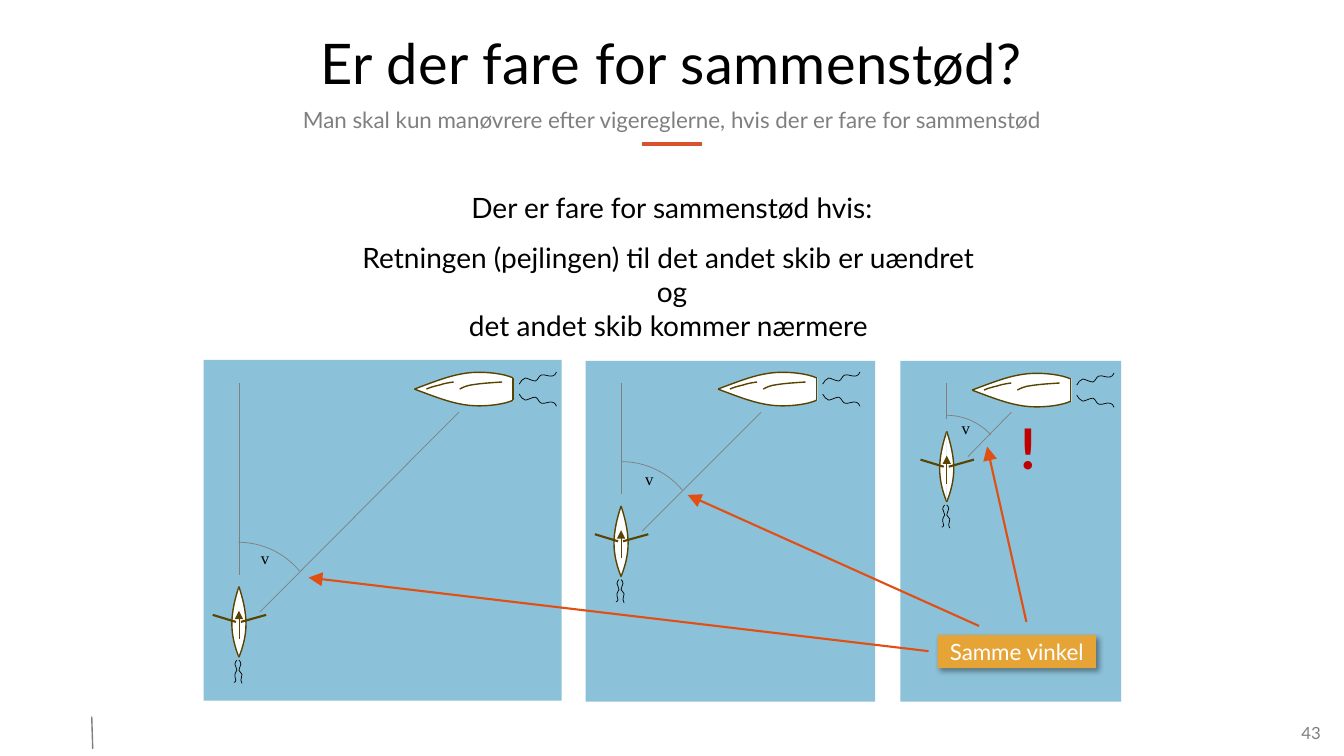
from lxml import etree
from pptx import Presentation
from pptx.dml.color import RGBColor
from pptx.enum.shapes import MSO_CONNECTOR, MSO_SHAPE
from pptx.enum.text import MSO_ANCHOR, MSO_AUTO_SIZE, PP_ALIGN
from pptx.oxml.ns import qn
from pptx.util import Pt

SCALE = 9144
LEFT, MID, RIGHT = PP_ALIGN.LEFT, PP_ALIGN.CENTER, PP_ALIGN.RIGHT
TOP, CENTER = MSO_ANCHOR.TOP, MSO_ANCHOR.MIDDLE
FIXED = MSO_AUTO_SIZE.NONE
RECT, ARC = MSO_SHAPE.RECTANGLE, MSO_SHAPE.ARC
STRAIGHT = MSO_CONNECTOR.STRAIGHT

BLACK = RGBColor(0x00, 0x00, 0x00)
WHITE = RGBColor(0xFF, 0xFF, 0xFF)
GREY = RGBColor(0x7F, 0x7F, 0x7F)
RUST = RGBColor(0xD9, 0x52, 0x2A)
FLAME = RGBColor(0xE1, 0x4F, 0x13)
SEA = RGBColor(0x8B, 0xC1, 0xD9)
AMBER = RGBColor(0xE7, 0xA4, 0x36)
WOOD = RGBColor(0x58, 0x43, 0x00)
RED = RGBColor(0xC0, 0x00, 0x00)

HULL = [(0, 0), (98, -11), (98, 11)]
SIDE = [(0, 0), (24, -9), (37, -14), (53, -16), (70, -18), (90, -15), (98, -11)]
DECKS = [
    [(12, 0), (16, -2), (21, -3), (25, -4), (30, -6), (39, -7), (39, -7)],
    [(45, 0), (52, -4), (56, -4), (63, -5), (70, -6), (87, -7), (87, -7)],
]
WAKE = [(104, -5), (106, -8), (107, -10), (110, -11), (112, -11), (117, -8),
        (120, -8), (123, -9), (123, -13), (126, -14), (129, -15), (134, -12),
        (137, -13), (139, -13), (140, -15), (141, -17)]
HALF = [(0, 70), (-4, 60), (-7, 49), (-7, 37), (-7, 25), (-4, 12), (0, 0)]
TRAILS = [
    [(-2, 73), (-3, 74), (-4, 75), (-4, 77), (-4, 78), (-2, 81), (-2, 83),
     (-2, 84), (-4, 85), (-4, 87), (-5, 88), (-3, 91), (-3, 93), (-3, 94),
     (-4, 95), (-5, 95)],
    [(0, 73), (1, 74), (2, 75), (2, 77), (2, 78), (0, 81), (0, 83), (1, 85),
     (2, 85), (3, 87), (3, 88), (2, 92), (2, 93), (2, 95), (3, 95), (3, 96)],
]

SCENES = [
    dict(sea=(202, 357, 355, 338), ship=(411, 386), boat=(237, 582),
         aim=(455, 409), arc=(158, 538, 157), end=192.3, mark=(249, 538),
         arrow=(921, 646, 306, 573)),
    dict(sea=(581, 358, 287, 338), ship=(712, 386), boat=(616, 502),
         aim=(755, 409), arc=(538, 458, 157), end=192.3, mark=(630, 460),
         arrow=(971, 621, 682, 491)),
    dict(sea=(893, 358, 219, 338), ship=(964, 387), boat=(939, 428),
         aim=(1003, 409), arc=(880, 412, 118), end=190.49, mark=(944, 410),
         arrow=(1018, 617, 979, 443)),
]


def emu(*nums):
    """Turn px into EMU."""
    return [n * SCALE for n in nums]


def flip(pts, x=1, y=1):
    """Mirror points about the axes."""
    return [(a * x, b * y) for a, b in pts]


class Deck:
    """Holds the style and the current slide."""

    def __init__(self, font):
        self.font = font
        self.prs = Presentation()
        self.prs.slide_width, self.prs.slide_height = emu(1333, 750)
        self.slide = self.prs.slides.add_slide(self.prs.slide_layouts[1])
        self.shapes = self.slide.shapes

    def style(self, para, size, color, align=LEFT, font=None, bold=False):
        """Format a paragraph and its runs."""
        para.alignment = align
        for run in para.runs:
            run.font.name = font or self.font
            run.font.size = Pt(size)
            run.font.bold = bold
            run.font.color.rgb = color

    def hold(self, idx, box):
        """Move a placeholder and return its text frame."""
        item = self.slide.placeholders[idx]
        item.left, item.top, item.width, item.height = emu(*box)
        frame = item.text_frame
        frame.auto_size = FIXED
        frame.vertical_anchor = TOP
        return frame

    def title(self, box, text):
        """Fill the title."""
        frame = self.hold(0, box)
        frame.text = text
        para = frame.paragraphs[0]
        para.line_spacing = 0.9
        self.style(para, 40, BLACK, MID)
        para.runs[0].font._element.set("spc", "30")

    def body(self, box, lines):
        """Fill the body with plain centred paragraphs."""
        frame = self.hold(1, box)
        for i, text in enumerate(lines):
            para = frame.add_paragraph() if i else frame.paragraphs[0]
            para.text = text
            props = para._p.get_or_add_pPr()
            props.set("marL", "0")
            props.set("indent", "0")
            etree.SubElement(props, qn("a:buNone"))
            para.space_before = Pt(12 if i else 0)
            if i:
                para.line_spacing = Pt(24)
            self.style(para, 20, BLACK, MID)

    def text(self, box, text, size, color, inset=True, space=1.0, **look):
        """Add a text box."""
        frame = self.shapes.add_textbox(*emu(*box)).text_frame
        frame.word_wrap = True
        if not inset:
            frame.margin_left = frame.margin_right = 0
            frame.margin_top = frame.margin_bottom = 0
        frame.text = text
        frame.paragraphs[0].line_spacing = space
        self.style(frame.paragraphs[0], size, color, **look)

    def paint(self, shape, fill, line=None, width=1):
        """Set fill and line without a shadow."""
        shape.shadow.inherit = False
        for part, color in ((shape.fill, fill), (shape.line.fill, line)):
            if color is None:
                part.background()
            else:
                part.solid()
                part.fore_color.rgb = color
        if line is not None:
            shape.line.width = Pt(width)
        return shape

    def rect(self, box, fill):
        """Add a plain rectangle."""
        return self.paint(self.shapes.add_shape(RECT, *emu(*box)), fill)

    def label(self, box, text):
        """Add a label with a soft shadow."""
        shape = self.rect(box, AMBER)
        fx = shape._element.spPr.find(qn("a:effectLst"))
        shade = etree.SubElement(fx, qn("a:outerShdw"), blurRad="50800",
                                 dist="38100", dir="2700000", algn="tl", rotWithShape="0")
        tint = etree.SubElement(shade, qn("a:srgbClr"), val="000000")
        etree.SubElement(tint, qn("a:alpha"), val="40000")
        frame = shape.text_frame
        frame.vertical_anchor = CENTER
        frame.text = text
        self.style(frame.paragraphs[0], 16, WHITE, MID)

    def line(self, ends, color, width, head=None):
        """Add a straight line, or an arrow with a head size."""
        link = self.shapes.add_connector(STRAIGHT, *emu(*ends))
        link.line.color.rgb = color
        link.line.width = Pt(width)
        if head:
            etree.SubElement(link.line._get_or_add_ln(), qn("a:tailEnd"),
                             type="triangle", w=head, len=head)
        etree.SubElement(link._element.spPr, qn("a:effectLst"))

    def arc(self, left, top, size, end):
        """Add an angle arc starting due north."""
        shape = self.shapes.add_shape(ARC, *emu(left, top, size, size))
        shape.adjustments[0] = 162
        shape.adjustments[1] = end
        self.paint(shape, None, GREY, 0.5)

    def free(self, at, pts, fill, line, width=1, close=False):
        """Add an outline placed at a point."""
        spots = [emu(at[0] + x, at[1] + y) for x, y in pts]
        form = self.shapes.build_freeform(*spots[0], scale=1.0)
        form.add_line_segments(spots[1:], close=close)
        return self.paint(form.convert_to_shape(), fill, line, width)

    def curve(self, at, pts, fill, line, width=1):
        """Add a chain of cubic curves."""
        shape = self.free(at, pts, fill, line, width)
        legs = list(shape._element.iter(qn("a:lnTo")))
        for i in range(0, len(legs), 3):
            bend = etree.SubElement(legs[i].getparent(), qn("a:cubicBezTo"))
            for leg in legs[i:i + 3]:
                bend.append(leg[0])
                leg.getparent().remove(leg)

    def ship(self, at):
        """Draw the large ship from its bow."""
        x, y = at
        for sign in (1, -1):
            self.curve(at, flip(WAKE, y=sign), None, BLACK, 0.5)
        self.free(at, HULL, WHITE, WHITE, close=True)
        self.line((x + 98, y - 11, x + 98, y + 11), WOOD, 1)
        for edge in (SIDE, flip(SIDE, y=-1), *DECKS):
            self.curve(at, edge, WHITE, WOOD)

    def boat(self, at):
        """Draw the rowing boat from its bow."""
        x, y = at
        for sign in (1, -1):
            self.curve(at, flip(HALF, x=sign), WHITE, WOOD)
        self.line((x, y + 52, x, y + 24), WOOD, 0.5, "med")
        for trail in TRAILS:
            self.curve(at, trail, None, BLACK, 0.5)
        for near, far in ((2, 27), (-3, -26)):
            self.line((x + near, y + 35, x + far, y + 28), WOOD, 1.5)

    def sight(self, scene):
        """Draw the course, the bearing and the angle between them."""
        x, y = scene["boat"]
        self.line((x, y - 12, x, 380), GREY, 0.5)
        self.line((x + 21, y + 25, *scene["aim"]), GREY, 0.5)
        self.arc(*scene["arc"], scene["end"])
        self.text((*scene["mark"], 47, 30), "v", 12, BLACK, font="Times New Roman")


def main():
    """Build the slide."""
    deck = Deck("Lato")
    deck.line((91, 711, 92, 743), GREY, 1)
    deck.text((1272, 717, 38, 20), "43", 12, GREY, inset=False, align=RIGHT)
    deck.title((60, 31, 1212, 71), "Er der fare for sammenstød?")
    deck.text((61, 90, 1211, 44),
              "Man skal kun manøvrere efter vigereglerne, hvis der er fare for sammenstød",
              16, GREY, space=1.4, align=MID)
    deck.line((637, 143, 696, 143), RUST, 3)
    deck.body((105, 184, 1123, 166), [
        "Der er fare for sammenstød hvis:",
        "Retningen (pejlingen) til det andet skib er uændret \nog\n"
        "det andet skib kommer nærmere ",
    ])
    for scene in SCENES:
        deck.rect(scene["sea"], SEA)
        deck.sight(scene)
        deck.ship(scene["ship"])
    for scene in SCENES:
        deck.line(scene["arrow"], FLAME, 1.5, "lg")
        deck.boat(scene["boat"])
    deck.label((930, 630, 157, 33), "Samme vinkel")
    deck.text((1002, 405, 61, 77), "!", 40, RED, bold=True)
    deck.prs.save("out.pptx")


if __name__ == "__main__":
    main()
